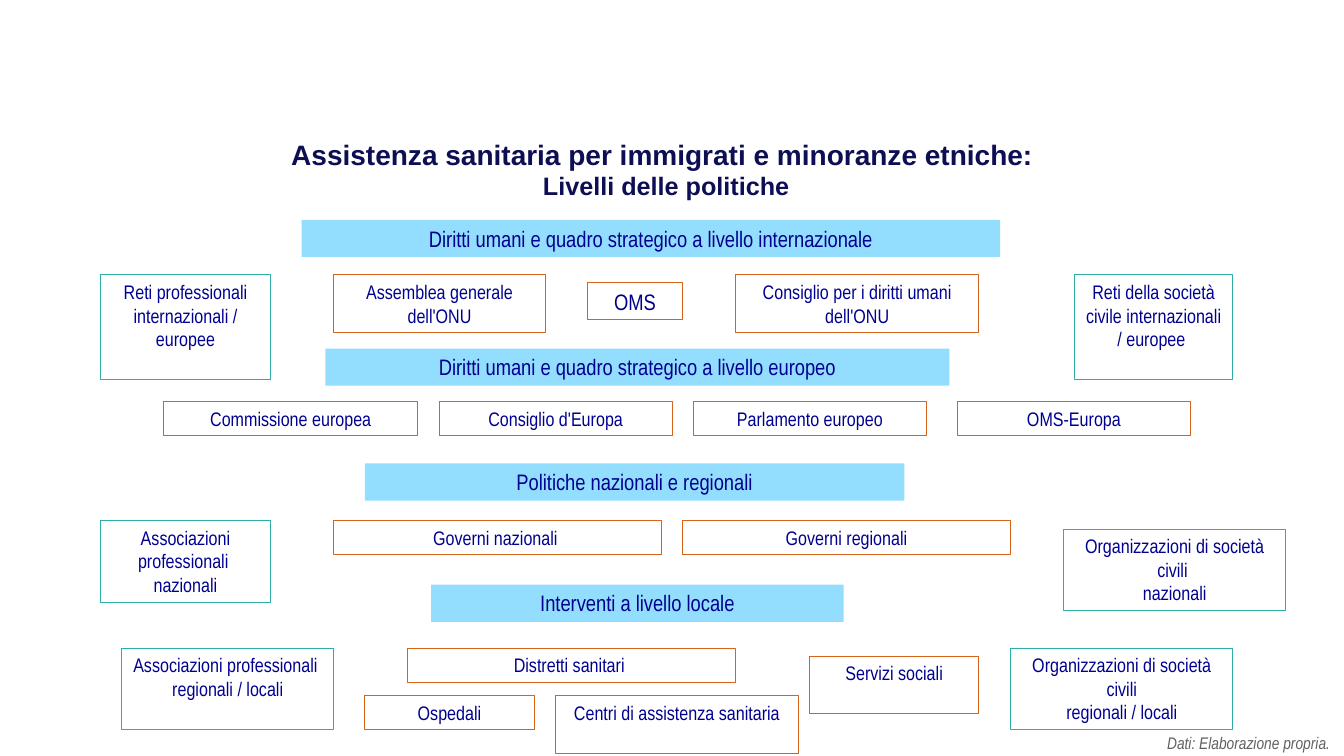
"""Build a slide on the policy levels of health care for immigrants and ethnic minorities."""
from dataclasses import dataclass

from lxml.etree import SubElement
from pptx import Presentation
from pptx.dml.color import RGBColor
from pptx.dml.fill import FillFormat
from pptx.enum.shapes import MSO_SHAPE
from pptx.enum.text import MSO_ANCHOR, MSO_AUTO_SIZE, PP_ALIGN
from pptx.oxml.ns import qn
from pptx.slide import Slide
from pptx.text.text import TextFrame
from pptx.util import Pt

SKY = "31C1FF"
NAVY = "000090"
TITLE_NAVY = "0D0E53"
ORANGE = "D6631A"
TEAL = "2EADA9"
GREY = "606060"
BAND_HEIGHT = 26.6
ONE_LINE, TWO_LINES, THREE_LINES, FOUR_LINES = 24.2, 41.2, 58.2, 75
BODIES_ROW, EUROPE_ROW, NATIONAL_ROW, LOCAL_ROW, CARE_ROW = 196.4, 287, 372, 463, 497


@dataclass(frozen=True)
class Band:
    """A filled heading for one policy level."""

    left: float
    top: float
    width: float
    text: str


@dataclass(frozen=True)
class Box:
    """An outlined box naming one actor."""

    left: float
    top: float
    width: float
    height: float
    text: str
    outline: str = ORANGE
    size: float = 14


BANDS = [
    Band(215.5, 157, 499, "Diritti umani e quadro strategico a livello internazionale"),
    Band(232.5, 249, 445.7, "Diritti umani e quadro strategico a livello europeo"),
    Band(260.6, 331, 385.4, "Politiche nazionali e regionali"),
    Band(308, 417.6, 294.6, "Interventi a livello locale"),
]

BOXES = [
    Box(238.2, BODIES_ROW, 151.5, TWO_LINES, "Assemblea generale dell'ONU"),
    Box(419.6, 202, 68, BAND_HEIGHT, "OMS", size=16),
    Box(525.4, BODIES_ROW, 173.8, TWO_LINES, "Consiglio per i diritti umani dell'ONU"),
    Box(117, EUROPE_ROW, 181.4, ONE_LINE, "Commissione europea"),
    Box(313.8, EUROPE_ROW, 166.3, ONE_LINE, "Consiglio d'Europa"),
    Box(495.4, EUROPE_ROW, 166.3, ONE_LINE, "Parlamento europeo"),
    Box(684, EUROPE_ROW, 166.3, ONE_LINE, "OMS-Europa"),
    Box(238.2, NATIONAL_ROW, 234.6, ONE_LINE, "Governi nazionali "),
    Box(487.4, NATIONAL_ROW, 234.6, ONE_LINE, "Governi regionali"),
    Box(291, LOCAL_ROW, 234.6, ONE_LINE, "Distretti sanitari "),
    Box(260.6, CARE_ROW, 121, ONE_LINE, "Ospedali"),
    Box(396.8, CARE_ROW, 173.6, TWO_LINES, "Centri di assistenza sanitaria"),
    Box(578.2, 468.6, 121, TWO_LINES, "Servizi sociali"),
    Box(72, BODIES_ROW, 121, FOUR_LINES,
        "Reti professionali\ninternazionali / europee", TEAL),
    Box(767.6, BODIES_ROW, 113, FOUR_LINES,
        "Reti della società civile internazionali / europee ", TEAL),
    Box(72, NATIONAL_ROW, 121, THREE_LINES, "Associazioni professionali \nnazionali", TEAL),
    Box(759.6, 378, 159, THREE_LINES, "Organizzazioni di società civili \nnazionali", TEAL),
    Box(87, LOCAL_ROW, 151.4, THREE_LINES,
        "Associazioni professionali \nregionali / locali", TEAL),
    Box(722, LOCAL_ROW, 158.6, THREE_LINES,
        "Organizzazioni di società civili\nregionali / locali", TEAL),
]


def paint(fill: FillFormat, color: str) -> None:
    """Make a fill solid in a hex colour."""
    fill.solid()
    fill.fore_color.rgb = RGBColor.from_string(color)


def write_text(frame: TextFrame, text: str, *, sizes: tuple[float, ...] = (14,),
               font: str = "Arial Narrow", color: str = NAVY, bold: bool = False,
               italic: bool = False, align: PP_ALIGN = PP_ALIGN.CENTER) -> None:
    """Write one paragraph a line, the last size serving any further lines."""
    frame.text = text
    frame.word_wrap = True
    frame.auto_size = MSO_AUTO_SIZE.SHAPE_TO_FIT_TEXT
    frame.vertical_anchor = MSO_ANCHOR.TOP
    for index, paragraph in enumerate(frame.paragraphs):
        paragraph.alignment = align
        for run in paragraph.runs:
            run.font.name = font
            run.font.size = Pt(sizes[min(index, len(sizes) - 1)])
            run.font.bold = bold
            run.font.italic = italic
            paint(run.font.fill, color)


def add_title(slide: Slide) -> None:
    """Place and format the title."""
    title = slide.shapes.title
    title.left, title.top, title.width, title.height = Pt(64), Pt(94.3), Pt(823.7), Pt(52.6)
    write_text(title.text_frame,
               "Assistenza sanitaria per immigrati e minoranze etniche: \nLivelli delle politiche",
               sizes=(20, 18), font="Arial", color=TITLE_NAVY, bold=True)


def add_band(slide: Slide, band: Band) -> None:
    """Draw a translucent heading band."""
    shape = slide.shapes.add_shape(MSO_SHAPE.RECTANGLE, Pt(band.left), Pt(band.top),
                                   Pt(band.width), Pt(BAND_HEIGHT))
    shape.shadow.inherit = False
    shape.line.fill.background()
    paint(shape.fill, SKY)
    color = shape.element.spPr.find(qn("a:solidFill")).find(qn("a:srgbClr"))
    SubElement(color, qn("a:alpha")).set("val", "52000")
    write_text(shape.text_frame, band.text, sizes=(16,))


def add_box(slide: Slide, box: Box) -> None:
    """Draw an outlined box."""
    shape = slide.shapes.add_shape(MSO_SHAPE.RECTANGLE, Pt(box.left), Pt(box.top),
                                   Pt(box.width), Pt(box.height))
    shape.shadow.inherit = False
    shape.fill.background()
    paint(shape.line.fill, box.outline)
    shape.line.width = Pt(0.75)
    write_text(shape.text_frame, box.text, sizes=(box.size,))


def add_credit(slide: Slide) -> None:
    """Add the data credit at the bottom right."""
    credit = slide.shapes.add_textbox(Pt(692), Pt(520), Pt(268), Pt(21.8))
    write_text(credit.text_frame, "Dati: Elaborazione propria. ", sizes=(12,), color=GREY,
               italic=True, align=PP_ALIGN.RIGHT)


def main() -> None:
    """Build and save the presentation."""
    presentation = Presentation()
    presentation.slide_width, presentation.slide_height = Pt(960), Pt(540)
    slide = presentation.slides.add_slide(presentation.slide_layouts.get_by_name("Title Only"))
    add_title(slide)
    for band in BANDS:
        add_band(slide, band)
    for box in BOXES:
        add_box(slide, box)
    add_credit(slide)
    presentation.save("out.pptx")


if __name__ == "__main__":
    main()
